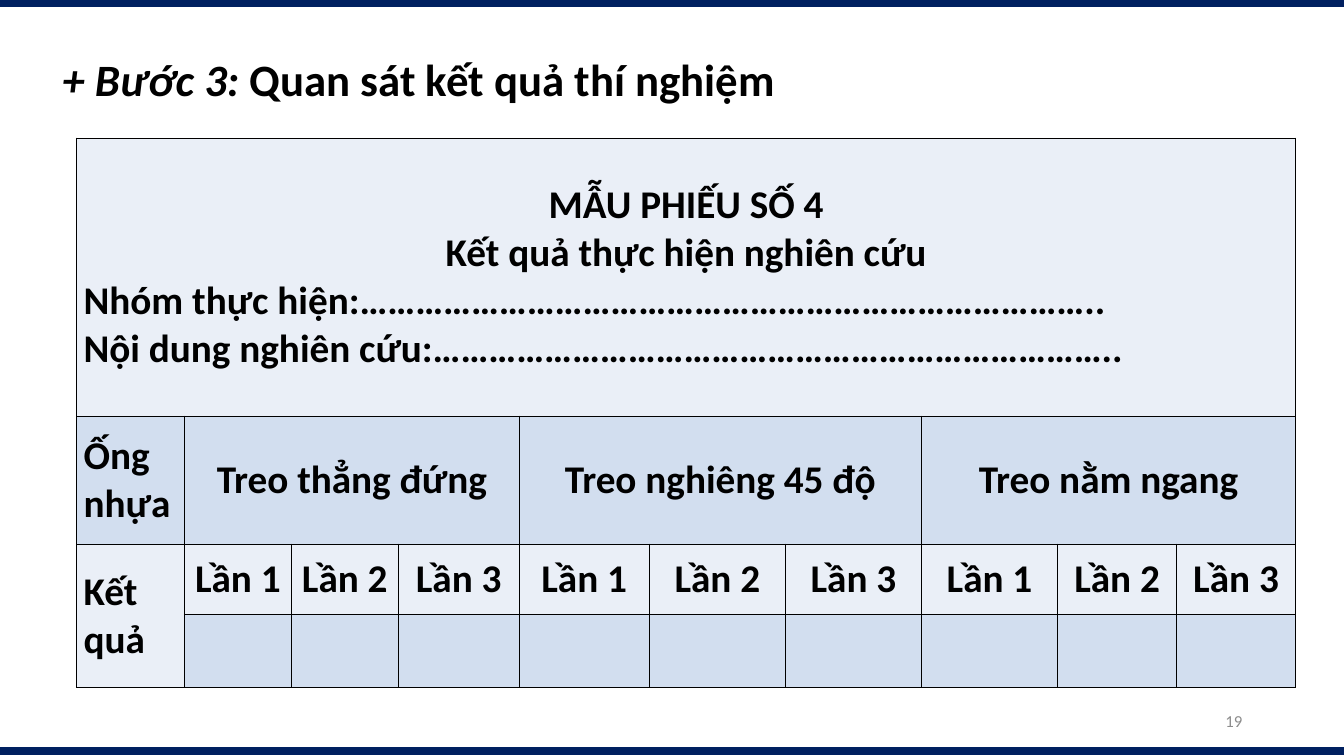
import pptx
import pptx.dml.color
import pptx.enum.shapes
import pptx.enum.text
import pptx.oxml
import pptx.oxml.ns
import pptx.util

Inches, Pt = pptx.util.Inches, pptx.util.Pt
ALIGN = pptx.enum.text.PP_ALIGN
MIDDLE = pptx.enum.text.MSO_ANCHOR.MIDDLE

WIDTH, HEIGHT = 13.33, 7.5
FONT = "Calibri"
NAVY, BLACK, GREY = "002060", "000000", "8C8C8C"
LIGHT, BLUE = "EAEFF7", "D2DEEF"

COLUMNS = [1.07, 1.06, 1.06, 1.2, 1.29, 1.35, 1.35, 1.35, 1.18, 1.18]
ROWS = [2.76, 1.27, 0.7, 0.72]
FORM_HEADING = ["MẪU PHIẾU SỐ 4", "Kết quả thực hiện nghiên cứu"]
FORM_FIELDS = [
    "Nhóm thực hiện:……………………………………………………………………..",
    "Nội dung nghiên cứu:………………………………………………………………..",
]
POSITIONS = ["Treo thẳng đứng", "Treo nghiêng 45 độ", "Treo nằm ngang"]
TRIALS = 3


def color(value):
    return pptx.dml.color.RGBColor.from_string(value)


def add_run(p, text, size=28, fill=BLACK, bold=True, italic=False):
    r = p.add_run()
    r.text = text
    r.font.name = FONT
    r.font.size = Pt(size)
    r.font.bold = bold
    r.font.italic = italic
    r.font.color.rgb = color(fill)


def add_bar(s, y):
    """Full-width rule across the slide."""
    line = s.shapes.add_connector(
        pptx.enum.shapes.MSO_CONNECTOR.STRAIGHT,
        0, Inches(y), Inches(WIDTH), Inches(y))
    line.line.color.rgb = color(NAVY)
    line.line.width = Pt(6)
    line._element.spPr.append(pptx.oxml.parse_xml(
        f'<a:effectLst {pptx.oxml.ns.nsdecls("a")}/>'))


def add_text(s, left, top, width, height, runs, align, wrap=True):
    """Text box with one paragraph; runs are (text, format) pairs."""
    sp = s.shapes.add_textbox(*map(Inches, (left, top, width, height)))
    tf = sp.text_frame
    tf.word_wrap = wrap
    p = tf.paragraphs[0]
    p.alignment = align
    for text, style in runs:
        add_run(p, text, **style)
    return tf


def style_cell(cell, fill):
    tc_pr = cell._tc.get_or_add_tcPr()
    for i, side in enumerate("LRTB"):
        tc_pr.insert(i, pptx.oxml.parse_xml(
            f'<a:ln{side} {pptx.oxml.ns.nsdecls("a")} w="{Pt(1)}">'
            f'<a:solidFill><a:srgbClr val="{BLACK}"/></a:solidFill></a:ln{side}>'))
    cell.fill.solid()
    cell.fill.fore_color.rgb = color(fill)
    cell.vertical_anchor = MIDDLE
    cell.margin_left = cell.margin_right = Inches(0.07)
    cell.margin_top = cell.margin_bottom = 0


def fill_cell(cell, lines):
    """Write (text, alignment) pairs as paragraphs."""
    tf = cell.text_frame
    for i, (text, align) in enumerate(lines):
        p = tf.add_paragraph() if i else tf.paragraphs[0]
        p.alignment = align
        add_run(p, text)


def add_result_form(s, left, top):
    table = s.shapes.add_table(
        len(ROWS), len(COLUMNS), Inches(left), Inches(top),
        Inches(sum(COLUMNS)), Inches(sum(ROWS))).table
    for column, width in zip(table.columns, COLUMNS):
        column.width = Inches(width)
    for row, height in zip(table.rows, ROWS):
        row.height = Inches(height)
    for r in range(len(ROWS)):
        for c in range(len(COLUMNS)):
            style_cell(table.cell(r, c), BLUE if r % 2 else LIGHT)

    # Form heading across the whole width
    table.cell(0, 0).merge(table.cell(0, len(COLUMNS) - 1))
    fill_cell(table.cell(0, 0),
              [(text, ALIGN.CENTER) for text in FORM_HEADING]
              + [(text, ALIGN.JUSTIFY) for text in FORM_FIELDS])

    # Row labels
    fill_cell(table.cell(1, 0), [("Ống nhựa", ALIGN.JUSTIFY)])
    table.cell(2, 0).merge(table.cell(3, 0))
    fill_cell(table.cell(2, 0), [("Kết quả", ALIGN.JUSTIFY)])

    # Three trials under each position of the tube
    for i, position in enumerate(POSITIONS):
        first = 1 + i * TRIALS
        table.cell(1, first).merge(table.cell(1, first + TRIALS - 1))
        fill_cell(table.cell(1, first), [(position, ALIGN.CENTER)])
        for trial in range(TRIALS):
            fill_cell(table.cell(2, first + trial),
                      [(f"Lần {trial + 1}", ALIGN.CENTER)])


def main():
    prs = pptx.Presentation()
    prs.slide_width, prs.slide_height = Inches(WIDTH), Inches(HEIGHT)
    s = prs.slides.add_slide(prs.slide_layouts[6])

    # Bars at the bottom and top edges
    add_bar(s, HEIGHT - 0.05)
    add_bar(s, 0.03)

    add_result_form(s, 0.76, 1.37)

    # Title
    tf = add_text(s, 0.52, 0.38, 7.33, 0.68,
                  [("+ Bước 3: ", dict(size=32, italic=True)),
                   ("Quan sát kết quả thí nghiệm", dict(size=32))],
                  ALIGN.JUSTIFY, wrap=False)
    tf.auto_size = pptx.enum.text.MSO_AUTO_SIZE.SHAPE_TO_FIT_TEXT
    tf.paragraphs[0].line_spacing = 1.15
    tf.paragraphs[0].space_before = Pt(5)

    # Slide number
    tf = add_text(s, 9.42, 6.95, 3, 0.4,
                  [("19", dict(size=12, fill=GREY, bold=False))], ALIGN.RIGHT)
    tf.vertical_anchor = MIDDLE

    prs.save("out.pptx")


if __name__ == "__main__":
    main()
